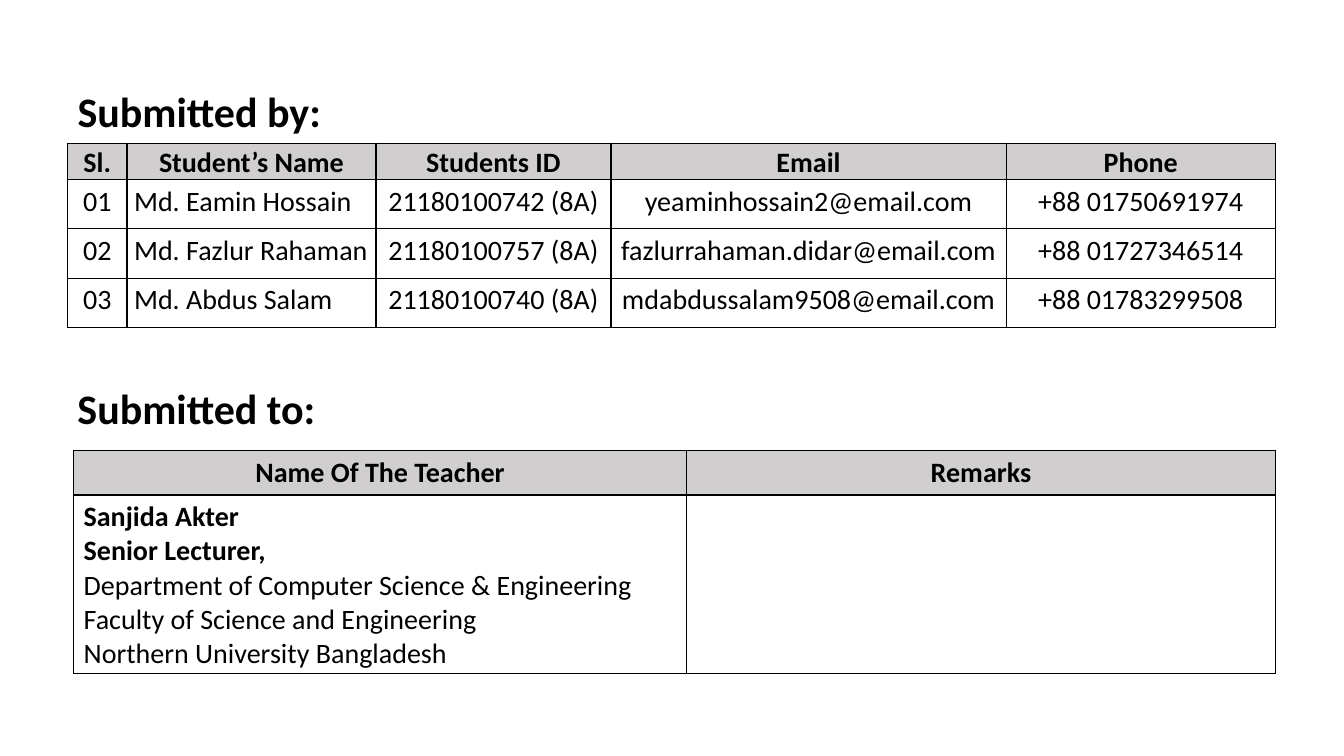
"""Build the slide that lists the students and their teacher."""
from lxml import etree
from pptx import Presentation, util as u
from pptx.dml.color import RGBColor
from pptx.enum import text as t
from pptx.oxml import ns


def write(frame, lines, size=20, bold=0, align=t.PP_ALIGN.LEFT, space=1.0, color="000000"):
    """Fill a frame with lines, the first few of them bold."""
    for i, line in enumerate(lines):
        para = frame.paragraphs[0] if i == 0 else frame.add_paragraph()
        para.alignment, para.line_spacing = align, space
        run = para.add_run()
        run.text = line
        font = run.font
        font.name, font.size, font.bold = "Calibri", u.Pt(size), i < bold
        font.color.rgb = RGBColor.from_string(color)


def paint(cell, fill, line="000000"):
    """Give a cell its fill and four thin borders."""
    cell.fill.solid()
    cell.fill.fore_color.rgb = RGBColor.from_string(fill)
    props = cell._tc.get_or_add_tcPr()
    for i, side in enumerate("LRTB"):
        edge = etree.Element(ns.qn(f"a:ln{side}"), w=str(u.Pt(1)))
        solid = etree.SubElement(edge, ns.qn("a:solidFill"))
        etree.SubElement(solid, ns.qn("a:srgbClr"), val=line)
        props.insert(i, edge)


deck = Presentation()
deck.slide_width, deck.slide_height = u.Inches(13.33), u.Inches(7.5)
slide = deck.slides.add_slide(deck.slide_layouts[5])

left = 0.67
title = slide.shapes.title
note = slide.shapes.add_textbox(0, 0, 0, 0)
heads = [(title, "Submitted by:", 0.8, 2.65), (note, "Submitted to:", 3.75, 2.59)]
for box, words, top, wide in heads:
    box.left, box.top = u.Inches(left), u.Inches(top)
    box.width, box.height = u.Inches(wide), u.Inches(0.61)
    frame = box.text_frame
    frame.word_wrap = False
    frame.auto_size = t.MSO_AUTO_SIZE.SHAPE_TO_FIT_TEXT
    frame.vertical_anchor = t.MSO_ANCHOR.TOP
    write(frame, [words], size=30, bold=1)

pupils = [
    ["Sl.", "Student’s Name", "Students ID", "Email", "Phone"],
    ["01", "Md. Eamin Hossain", "21180100742 (8A)", "yeaminhossain2@email.com", "+88 01750691974"],
    ["02", "Md. Fazlur Rahaman", "21180100757 (8A)", "fazlurrahaman.didar@email.com", "+88 01727346514"],
    ["03", "Md. Abdus Salam", "21180100740 (8A)", "mdabdussalam9508@email.com", "+88 01783299508"],
]
staff = [
    ["Name Of The Teacher", "Remarks"],
    ["Sanjida Akter\nSenior Lecturer,\nDepartment of Computer Science & Engineering\n"
     "Faculty of Science and Engineering\nNorthern University Bangladesh", ""],
]
grids = [
    (pupils, left, 1.42, [0.59, 2.47, 2.33, 3.92, 2.67], [0.36] + [0.49] * 3, (1.07, 1.15), 0.07, 0, 1, 0),
    (staff, 0.73, 4.47, [6.08, 5.84], [0.44, 1.77], (1.0, 1.0), 0.1, 0.05, 0, 2),
]
for data, x, y, cols, rows, gaps, side, pad, start, bold in grids:
    grid = slide.shapes.add_table(
        len(rows), len(cols), u.Inches(x), u.Inches(y), u.Inches(sum(cols)), u.Inches(sum(rows))
    ).table
    for col, wide in zip(grid.columns, cols):
        col.width = u.Inches(wide)
    for r, tall in enumerate(rows):
        grid.rows[r].height = u.Inches(tall)
        for c, words in enumerate(data[r]):
            cell = grid.cell(r, c)
            cell.margin_left = cell.margin_right = u.Inches(side)
            cell.margin_top = cell.margin_bottom = u.Inches(pad)
            paint(cell, "FFFFFF" if r else "D0CECE")
            align = t.PP_ALIGN.LEFT if r and c == start else t.PP_ALIGN.CENTER
            if words:
                write(cell.text_frame, words.split("\n"), bold=bold if r else 1,
                      align=align, space=gaps[min(r, 1)])

deck.save("out.pptx")
